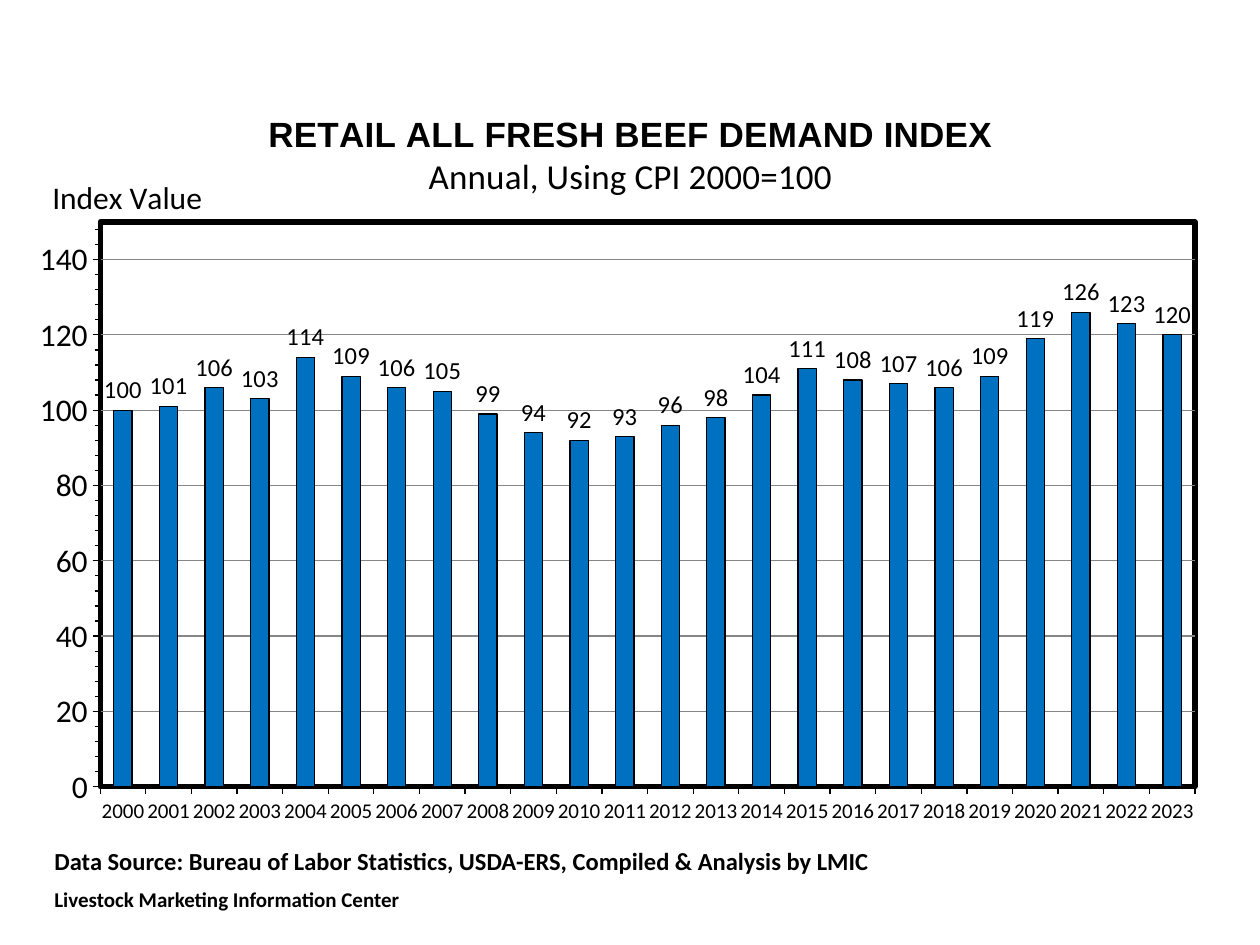
from pptx import Presentation
from pptx.chart.data import CategoryChartData
from pptx.dml.color import RGBColor
from pptx.enum.chart import XL_CHART_TYPE, XL_LABEL_POSITION, XL_TICK_MARK
from pptx.oxml import parse_xml
from pptx.oxml.ns import nsdecls, qn
from pptx.util import Pt

BLACK = RGBColor(0x00, 0x00, 0x00)
BLUE = RGBColor(0x00, 0x70, 0xC0)
GRAY = RGBColor(0x86, 0x86, 0x86)

FIRST_YEAR = 2000
INDEX_VALUES = [100, 101, 106, 103, 114, 109, 106, 105, 99, 94, 92, 93,
                96, 98, 104, 111, 108, 107, 106, 109, 119, 126, 123, 120]


def style_font(font, size, name="Calibri", bold=False):
    font.size = Pt(size)
    font.name = name
    font.bold = bold
    font.color.rgb = BLACK


def add_run(para, text, size, name="Calibri", bold=False):
    span = para.add_run()
    span.text = text
    style_font(span.font, size, name, bold)


def style_line(line, color, width):
    line.color.rgb = color
    line.width = Pt(width)


def make_layout(x, y, size=None):
    """Manual chart layout, in fractions of the chart area."""
    settings = [("xMode", "edge"), ("yMode", "edge"), ("x", x), ("y", y)]
    if size:
        settings.insert(0, ("layoutTarget", "inner"))
        settings += [("w", size[0]), ("h", size[1])]
    marks = "".join(f'<c:{tag} val="{value}"/>' for tag, value in settings)
    return parse_xml(f'<c:layout {nsdecls("c")}><c:manualLayout>{marks}'
                     '</c:manualLayout></c:layout>')


def drop_layout(element):
    for layout in element.findall(qn("c:layout")):
        element.remove(layout)


def place_title(title, x, y):
    element = title._element
    drop_layout(element)
    element.find(qn("c:tx")).addnext(make_layout(x, y))


def format_plot_area(chart):
    area = chart._chartSpace.chart.plotArea
    drop_layout(area)
    area.insert(0, make_layout(0.065, 0.185, (0.899, 0.758)))
    area.append(parse_xml(
        f'<c:spPr {nsdecls("c", "a")}>'
        '<a:solidFill><a:srgbClr val="FFFFFF"/></a:solidFill>'
        '<a:ln w="38100"><a:solidFill><a:srgbClr val="000000"/></a:solidFill></a:ln>'
        '</c:spPr>'))


def format_titles(chart):
    frame = chart.chart_title.text_frame
    add_run(frame.paragraphs[0], "RETAIL ALL FRESH BEEF DEMAND INDEX", 20, "Arial", True)
    add_run(frame.add_paragraph(), "Annual, Using CPI 2000=100", 20)
    place_title(chart.chart_title, 0.2, 0.035)

    axis_title = chart.value_axis.axis_title
    add_run(axis_title.text_frame.paragraphs[0], "Index Value", 18)
    axis_title.text_frame._txBody.bodyPr.set("rot", "0")
    axis_title.text_frame._txBody.bodyPr.set("vert", "horz")
    place_title(axis_title, 0.021, 0.115)


def format_axes(chart):
    for axis, size in ((chart.category_axis, 12), (chart.value_axis, 18)):
        style_font(axis.tick_labels.font, size)
        style_line(axis.format.line, BLACK, 0.75)
        axis.major_tick_mark = XL_TICK_MARK.OUTSIDE
    chart.category_axis.minor_tick_mark = XL_TICK_MARK.NONE

    axis = chart.value_axis
    axis.minimum_scale, axis.maximum_scale = 0, 150
    axis.major_unit, axis.minor_unit = 20, 4
    axis.minor_tick_mark = XL_TICK_MARK.OUTSIDE
    axis.has_major_gridlines = True
    style_line(axis.major_gridlines.format.line, GRAY, 0.75)


def format_columns(plot):
    plot.gap_width = 150
    plot.vary_by_categories = False
    series = plot.series[0]
    series.format.fill.solid()
    series.format.fill.fore_color.rgb = BLUE
    style_line(series.format.line, BLACK, 0.75)
    labels = series.data_labels
    labels.show_value = True
    labels.position = XL_LABEL_POSITION.OUTSIDE_END
    labels.number_format = "#,##0"
    labels.number_format_is_linked = False
    style_font(labels.font, 14)


def add_index_chart(page):
    data = CategoryChartData(number_format="General")
    data.categories = [str(FIRST_YEAR + step) for step in range(len(INDEX_VALUES))]
    data.add_series("Series 1", INDEX_VALUES)
    chart = page.shapes.add_chart(XL_CHART_TYPE.COLUMN_CLUSTERED, Pt(12), Pt(48),
                                  Pt(696), Pt(426), data).chart
    chart.has_legend = False
    style_font(chart.font, 18)
    format_titles(chart)
    format_axes(chart)
    format_columns(chart.plots[0])
    format_plot_area(chart)


def add_source_note(page):
    box = page.shapes.add_textbox(Pt(24), Pt(480), Pt(498), Pt(46))
    frame = box.text_frame
    frame.word_wrap = True
    add_run(frame.paragraphs[0],
            "Data Source: Bureau of Labor Statistics, USDA-ERS, "
            "Compiled & Analysis by LMIC", 14, bold=True)
    para = frame.add_paragraph()
    para.space_before = Pt(6)
    add_run(para, "Livestock Marketing Information Center", 12, bold=True)


def main():
    deck = Presentation()
    deck.slide_width, deck.slide_height = Pt(720), Pt(540)
    page = deck.slides.add_slide(deck.slide_layouts[6])
    add_index_chart(page)
    add_source_note(page)
    deck.save("out.pptx")


if __name__ == "__main__":
    main()
